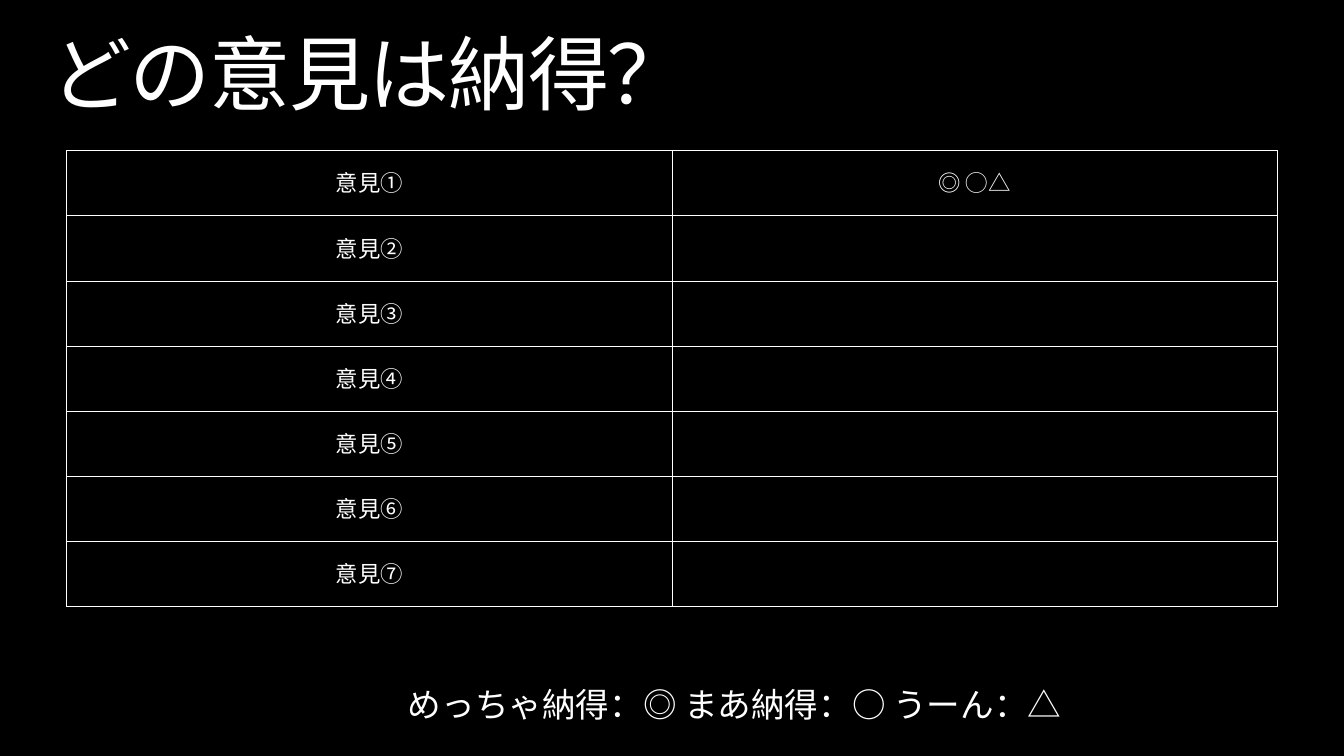
from lxml.etree import SubElement
from pptx import Presentation
from pptx.dml.color import RGBColor
from pptx.enum.text import MSO_ANCHOR as Anchor, MSO_AUTO_SIZE as AutoSize, PP_ALIGN as Align
from pptx.oxml.ns import qn
from pptx.util import Pt

EMU_PER_PX = 9525
INSET = 6
FONT = "Noto Sans CJK JP"
COLORS = {"background": "000000", "text": "FFFFFF", "border": "FFFFFF"}
OPINIONS = "①②③④⑤⑥⑦"
RATINGS = "◎ ◯△"


def px(length):
    return length * EMU_PER_PX


def color(name):
    return RGBColor.from_string(COLORS[name])


def write_text(frame, text, size, line_spacing=0.9, align=Align.LEFT, tracking=0):
    paragraph = frame.paragraphs[0]
    paragraph.alignment = align
    paragraph.line_spacing = line_spacing
    run = paragraph.add_run()
    run.text = text
    run.font.size = Pt(size)
    run.font.name = FONT
    run.font.color.rgb = color("text")
    properties = run.font._element
    SubElement(properties, qn("a:ea")).set("typeface", FONT)
    if tracking:
        properties.set("spc", str(tracking))


def set_margins(target):
    target.margin_left = target.margin_right = px(INSET)
    target.margin_top = target.margin_bottom = px(INSET)
    target.vertical_anchor = Anchor.MIDDLE


def add_text(slide, bounds, text, wrap=True, auto_size=AutoSize.NONE, **text_format):
    frame = slide.shapes.add_textbox(*map(px, bounds)).text_frame
    set_margins(frame)
    frame.word_wrap = wrap
    frame.auto_size = auto_size
    write_text(frame, text, **text_format)


def set_borders(cell, width):
    properties = cell._tc.get_or_add_tcPr()
    for position, side in enumerate(("lnL", "lnR", "lnT", "lnB")):
        line = properties.makeelement(qn(f"a:{side}"), {"w": str(Pt(width))})
        fill = SubElement(line, qn("a:solidFill"))
        SubElement(fill, qn("a:srgbClr")).set("val", COLORS["border"])
        properties.insert(position, line)


def add_opinion_table(slide, left, top, column_width, row_height):
    rows = [(f"意見{number}", "") for number in OPINIONS]
    rows[0] = (rows[0][0], RATINGS)
    table = slide.shapes.add_table(
        len(rows), 2, px(left), px(top), px(2 * column_width), px(len(rows) * row_height)
    ).table
    table.first_row = table.horz_banding = False
    for row_index, row in enumerate(rows):
        for column_index, text in enumerate(row):
            cell = table.cell(row_index, column_index)
            set_margins(cell)
            cell.fill.solid()
            cell.fill.fore_color.rgb = color("background")
            set_borders(cell, 1)
            if text:
                write_text(cell.text_frame, text, size=32, align=Align.CENTER)


def main():
    presentation = Presentation()
    presentation.slide_width, presentation.slide_height = px(2560), px(1440)
    slide = presentation.slides.add_slide(presentation.slide_layouts[6])
    slide.background.fill.solid()
    slide.background.fill.fore_color.rgb = color("background")

    add_text(slide, (90, 32, 1848, 245), "どの意見は納得？",
             size=116, line_spacing=0.8, tracking=-230)
    add_opinion_table(slide, left=127, top=287, column_width=1153, row_height=124)
    add_text(slide, (771, 1292, 1271, 107), "めっちゃ納得：◎ まあ納得：○ うーん：△",
             wrap=False, auto_size=AutoSize.SHAPE_TO_FIT_TEXT, size=48)
    presentation.save("out.pptx")


if __name__ == "__main__":
    main()
